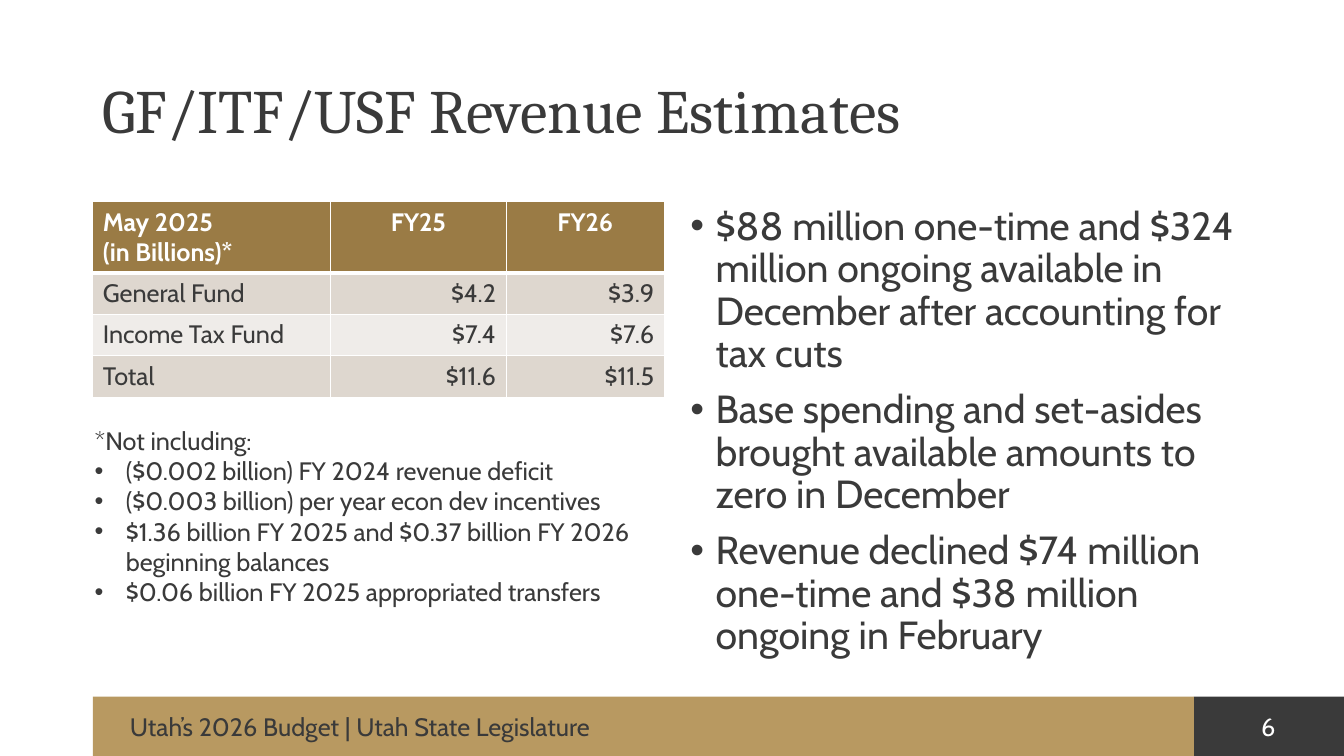
"""Build the revenue estimates slide with its table, notes and footer."""
from dataclasses import dataclass

from lxml import etree
from pptx import Presentation
from pptx.dml.color import RGBColor
from pptx.enum.shapes import MSO_SHAPE
from pptx.enum.text import MSO_ANCHOR, PP_ALIGN
from pptx.oxml.ns import qn
from pptx.util import Inches, Pt

LEFT, CENTER, RIGHT = PP_ALIGN.LEFT, PP_ALIGN.CENTER, PP_ALIGN.RIGHT
TOP, MIDDLE = MSO_ANCHOR.TOP, MSO_ANCHOR.MIDDLE
RECTANGLE = MSO_SHAPE.RECTANGLE

WHITE = RGBColor(0xFF, 0xFF, 0xFF)
CHARCOAL = RGBColor(0x3A, 0x3A, 0x3A)
GOLD = RGBColor(0xB8, 0x99, 0x61)
BRONZE = RGBColor(0x9A, 0x7B, 0x45)
BAND_DARK = RGBColor(0xDE, 0xD7, 0xCF)
BAND_LIGHT = RGBColor(0xEF, 0xEC, 0xE9)

BODY_FONT = "Cabin"
TITLE_FONT = "Cambria"


@dataclass
class Box:
    left: float
    top: float
    width: float
    height: float

    def lengths(self) -> tuple:
        return tuple(Inches(value) for value in (self.left, self.top, self.width, self.height))


@dataclass
class Bar:
    box: Box
    color: RGBColor


@dataclass
class TextBlock:
    box: Box
    lines: list[str]
    size: int = 18
    font: str = BODY_FONT
    color: RGBColor = CHARCOAL
    align: PP_ALIGN = LEFT
    anchor: MSO_ANCHOR = TOP
    line_spacing: float = 1.0
    space_before: int = 0
    indent: float = 0
    first_bullet: int = 0


FOOTER_BARS = [
    Bar(Box(11.84, 6.91, 1.49, 0.59), CHARCOAL),
    Bar(Box(0.92, 6.91, 10.92, 0.59), GOLD),
]

TEXT_BLOCKS = [
    TextBlock(Box(0.92, 0.4, 11.5, 1.45), ["GF/ITF/USF Revenue Estimates"],
              size=44, font=TITLE_FONT, anchor=MIDDLE, line_spacing=0.9),
    TextBlock(Box(6.75, 2, 5.67, 4.76), [
        "$88 million one-time and $324 million ongoing available in December "
        "after accounting for tax cuts",
        "Base spending and set-asides brought available amounts to zero in December",
        "Revenue declined $74 million one-time and $38 million ongoing in February",
    ], size=28, line_spacing=0.9, space_before=10, indent=0.25),
    TextBlock(Box(12.02, 7.01, 1.12, 0.31), ["6"], color=WHITE, align=CENTER),
    TextBlock(Box(1.19, 7.01, 10.34, 0.31), ["Utah’s 2026 Budget | Utah State Legislature"]),
    TextBlock(Box(0.84, 4.17, 5.6, 1.92), [
        "*Not including:",
        "($0.002 billion) FY 2024 revenue deficit",
        "($0.003 billion) per year econ dev incentives",
        "$1.36 billion FY 2025 and $0.37 billion FY 2026 beginning balances",
        "$0.06 billion FY 2025 appropriated transfers",
    ], indent=0.31, first_bullet=1),
]

TABLE_BOX = Box(0.92, 2, 5.67, 1.92)
COLUMN_WIDTHS = [2.36, 1.74, 1.57]
ROW_HEIGHTS = [0.69, 0.41, 0.41, 0.41]
REVENUE_ROWS = [
    ["May 2025\n(in Billions)*", "FY25", "FY26"],
    ["General Fund", "$4.2", "$3.9"],
    ["Income Tax Fund", "$7.4", "$7.6"],
    ["Total", "$11.6", "$11.5"],
]


def add_bar(slide, bar: Bar) -> None:
    shape = slide.shapes.add_shape(RECTANGLE, *bar.box.lengths())
    shape.shadow.inherit = False
    shape.fill.solid()
    shape.fill.fore_color.rgb = bar.color
    shape.line.fill.background()


def add_bullet(paragraph, indent: float) -> None:
    properties = paragraph._p.get_or_add_pPr()
    properties.set("marL", str(Inches(indent)))
    properties.set("indent", str(-Inches(indent)))
    bullet_font = etree.SubElement(properties, qn("a:buFont"))
    bullet_font.set("typeface", "Arial")
    etree.SubElement(properties, qn("a:buChar")).set("char", "•")


def style_font(paragraph, font_name: str, size: int, color: RGBColor, bold: bool = False) -> None:
    for run in paragraph.runs:
        run.font.name = font_name
        run.font.size = Pt(size)
        run.font.color.rgb = color
        run.font.bold = bold


def add_text(slide, block: TextBlock) -> None:
    text_frame = slide.shapes.add_textbox(*block.box.lengths()).text_frame
    text_frame.word_wrap = True
    text_frame.vertical_anchor = block.anchor
    text_frame.text = "\n".join(block.lines)
    for index, paragraph in enumerate(text_frame.paragraphs):
        if block.indent and index >= block.first_bullet:
            add_bullet(paragraph, block.indent)
        paragraph.alignment = block.align
        paragraph.line_spacing = block.line_spacing
        paragraph.space_before = Pt(block.space_before if index else 0)
        style_font(paragraph, block.font, block.size, block.color)


def add_borders(cell, bottom_width: int) -> None:
    properties = cell._tc.get_or_add_tcPr()
    widths = {"a:lnL": 1, "a:lnR": 1, "a:lnT": 1, "a:lnB": bottom_width}
    for position, (side, width) in enumerate(widths.items()):
        line = etree.Element(qn(side), w=str(Pt(width)))
        fill = etree.SubElement(line, qn("a:solidFill"))
        etree.SubElement(fill, qn("a:srgbClr"), val=str(WHITE))
        properties.insert(position, line)


def style_cell(cell, row: int, column: int) -> None:
    is_header = row == 0
    cell.fill.solid()
    cell.fill.fore_color.rgb = BRONZE if is_header else BAND_DARK if row % 2 else BAND_LIGHT
    add_borders(cell, 3 if is_header else 1)
    for paragraph in cell.text_frame.paragraphs:
        paragraph.alignment = LEFT if column == 0 else CENTER if is_header else RIGHT
        style_font(paragraph, BODY_FONT, 18, WHITE if is_header else CHARCOAL, is_header)


def add_revenue_table(slide) -> None:
    table = slide.shapes.add_table(
        len(REVENUE_ROWS), len(COLUMN_WIDTHS), *TABLE_BOX.lengths()).table
    for column, width in zip(table.columns, COLUMN_WIDTHS):
        column.width = Inches(width)
    for row, height in zip(table.rows, ROW_HEIGHTS):
        row.height = Inches(height)
    for row_index, values in enumerate(REVENUE_ROWS):
        for column_index, value in enumerate(values):
            cell = table.cell(row_index, column_index)
            cell.text_frame.text = value
            style_cell(cell, row_index, column_index)


def main() -> None:
    presentation = Presentation()
    presentation.slide_width = Inches(13.33)
    presentation.slide_height = Inches(7.5)
    slide = presentation.slides.add_slide(presentation.slide_layouts[6])
    for bar in FOOTER_BARS:
        add_bar(slide, bar)
    add_revenue_table(slide)
    for block in TEXT_BLOCKS:
        add_text(slide, block)
    presentation.save("out.pptx")


if __name__ == "__main__":
    main()
